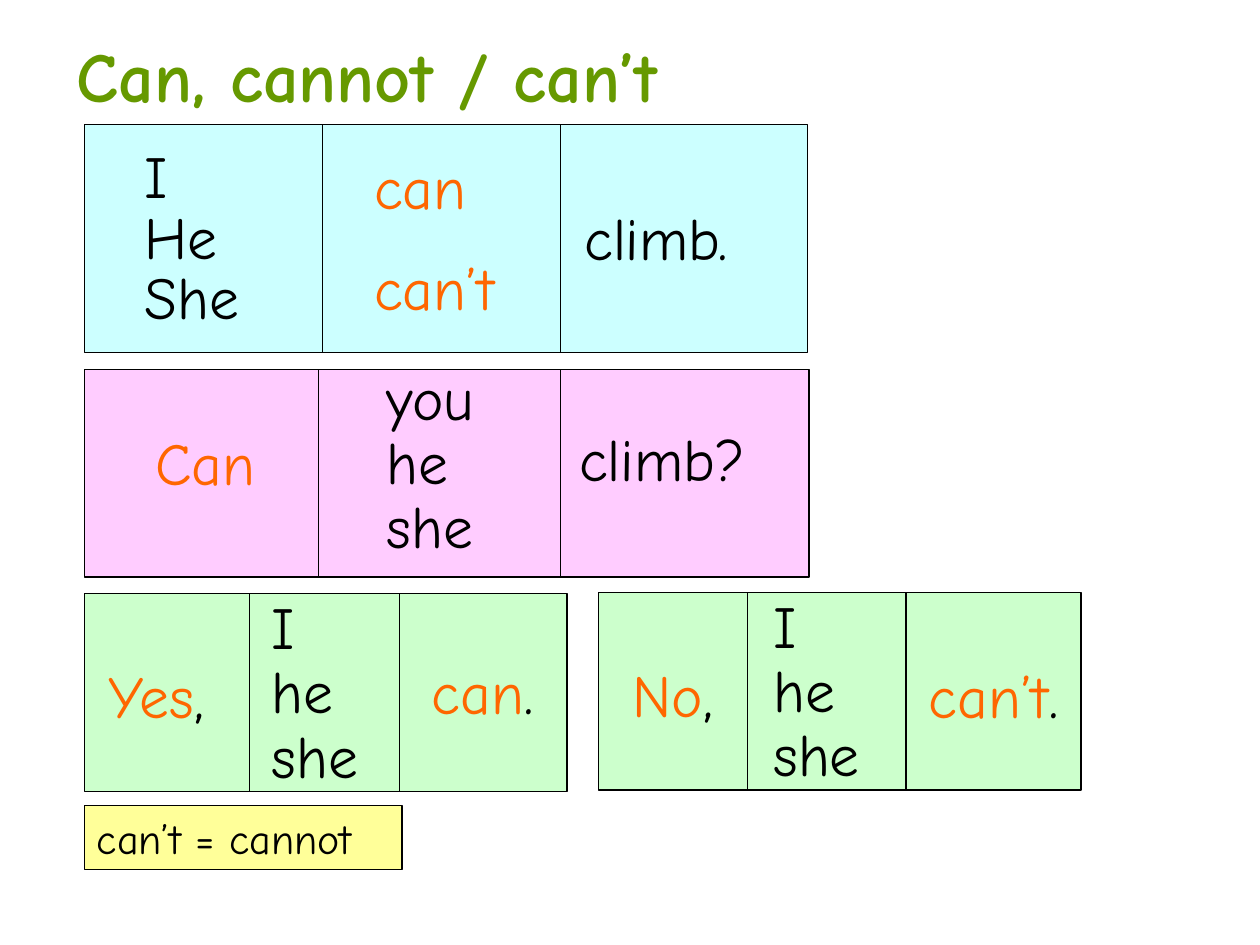
from lxml.etree import SubElement
from pptx import Presentation
from pptx.dml.color import RGBColor
from pptx.enum.shapes import MSO_CONNECTOR, MSO_SHAPE
from pptx.enum.text import MSO_ANCHOR, PP_ALIGN
from pptx.oxml.ns import qn
from pptx.util import Inches, Pt

FONT = "Comic Neue"
BLACK = RGBColor(0x00, 0x00, 0x00)
GREEN = RGBColor(0x66, 0x99, 0x00)
ORANGE = RGBColor(0xFF, 0x66, 0x00)
PALE_BLUE = RGBColor(0xCC, 0xFF, 0xFF)
PALE_PINK = RGBColor(0xFF, 0xCC, 0xFF)
PALE_GREEN = RGBColor(0xCC, 0xFF, 0xCC)
PALE_YELLOW = RGBColor(0xFF, 0xFF, 0x99)


def set_font(font, size, color, bold=False):
    font.name = FONT
    font.size = Pt(size)
    font.bold = bold
    font.color.rgb = color


def add_panel(shapes, left, top, width, height, fill):
    panel = shapes.add_shape(MSO_SHAPE.RECTANGLE, Inches(left), Inches(top),
                             Inches(width), Inches(height))
    panel.shadow.inherit = False
    panel.fill.solid()
    panel.fill.fore_color.rgb = fill
    panel.line.color.rgb = BLACK
    panel.line.width = Pt(0.75)
    return panel


def add_divider(shapes, x, top, bottom):
    divider = shapes.add_connector(MSO_CONNECTOR.STRAIGHT, Inches(x), Inches(top),
                                   Inches(x), Inches(bottom))
    divider.line.color.rgb = BLACK
    divider.line.width = Pt(0.75)
    SubElement(divider._element.spPr, qn("a:effectLst"))


def add_grid(page, left, top, width, height, fill, dividers):
    """Add a panel split into columns; return the group's shapes."""
    shapes = page.shapes.add_group_shape().shapes
    add_panel(shapes, left, top, width, height, fill)
    for x in dividers:
        add_divider(shapes, x, top, top + height)
    return shapes


def add_words(shapes, left, top, width, height, lines, color=BLACK, size=34,
              bold=False, spacing=None, gap=0):
    """Add a text box with one paragraph per line."""
    box = shapes.add_textbox(Inches(left), Inches(top), Inches(width), Inches(height))
    frame = box.text_frame
    frame.word_wrap = True
    for index, line in enumerate(lines):
        para = frame.paragraphs[0] if index == 0 else frame.add_paragraph()
        para.text = line
        set_font(para.font, size, color, bold)
        if spacing:
            para.line_spacing = spacing
        if gap and index:
            para.space_before = Pt(gap)
    return box


def add_answer(shapes, left, top, width, word, mark=""):
    """Add a centred orange word followed by a black punctuation mark."""
    box = add_words(shapes, left, top, width, 0.67, [word], ORANGE)
    para = box.text_frame.paragraphs[0]
    para.alignment = PP_ALIGN.CENTER
    if mark:
        span = para.add_run()
        span.text = mark
        span.font.color.rgb = BLACK


def add_statement(page):
    shapes = add_grid(page, 0.67, 0.99, 5.74, 1.81, PALE_BLUE, [2.56, 4.45])
    add_words(shapes, 1.05, 1.14, 1.18, 1.54, ["I", "He", "She"], spacing=0.85)
    add_words(shapes, 2.87, 1.14, 1.42, 1.51, ["can", "can’t"], ORANGE, gap=17)
    add_words(shapes, 4.54, 1.63, 2.2, 0.58, ["climb."], spacing=0.85)


def add_question(page):
    shapes = add_grid(page, 0.67, 2.93, 5.75, 1.65, PALE_PINK, [2.53, 4.45])
    add_answer(shapes, 0.96, 3.33, 1.34, "Can")
    add_words(shapes, 2.97, 2.88, 1.18, 1.63, ["you", "he", "she"], spacing=0.9)
    add_words(shapes, 4.5, 3.39, 2.2, 0.58, ["climb?"], spacing=0.85)


def add_reply(page, left, top, dividers, opening, pronoun_left, ending):
    """Add a short answer; opening and ending are (left, top, width, word, mark)."""
    shapes = add_grid(page, left, top, 3.83, 1.57, PALE_GREEN, dividers)
    add_answer(shapes, *opening)
    add_words(shapes, pronoun_left, top - 0.01, 1.2, 1.63, ["I", "he", "she"], spacing=0.9)
    add_answer(shapes, *ending)


def add_note(page):
    note = add_panel(page.shapes, 0.67, 6.39, 2.52, 0.51, PALE_YELLOW)
    note.text_frame.vertical_anchor = MSO_ANCHOR.MIDDLE
    para = note.text_frame.paragraphs[0]
    para.text = "can’t = cannot"
    para.alignment = PP_ALIGN.LEFT
    set_font(para.font, 24, BLACK)


def main():
    deck = Presentation()
    deck.slide_width = Inches(10)
    deck.slide_height = Inches(7.5)
    page = deck.slides.add_slide(deck.slide_layouts[6])

    add_words(page.shapes, 0.51, 0.21, 5.4, 0.77, ["Can, cannot / can’t"],
              GREEN, size=40, bold=True)
    add_statement(page)
    add_question(page)
    add_reply(page, 4.75, 4.7, [5.93, 7.19], (4.83, 5.17, 1.02, "No", ","),
              6.04, (7.2, 5.18, 1.37, "can’t", "."))
    add_note(page)
    add_reply(page, 0.67, 4.71, [1.98, 3.17], (0.59, 5.18, 1.3, "Yes", ","),
              2.06, (3.3, 5.15, 1.06, "can", "."))
    deck.save("out.pptx")


if __name__ == "__main__":
    main()
